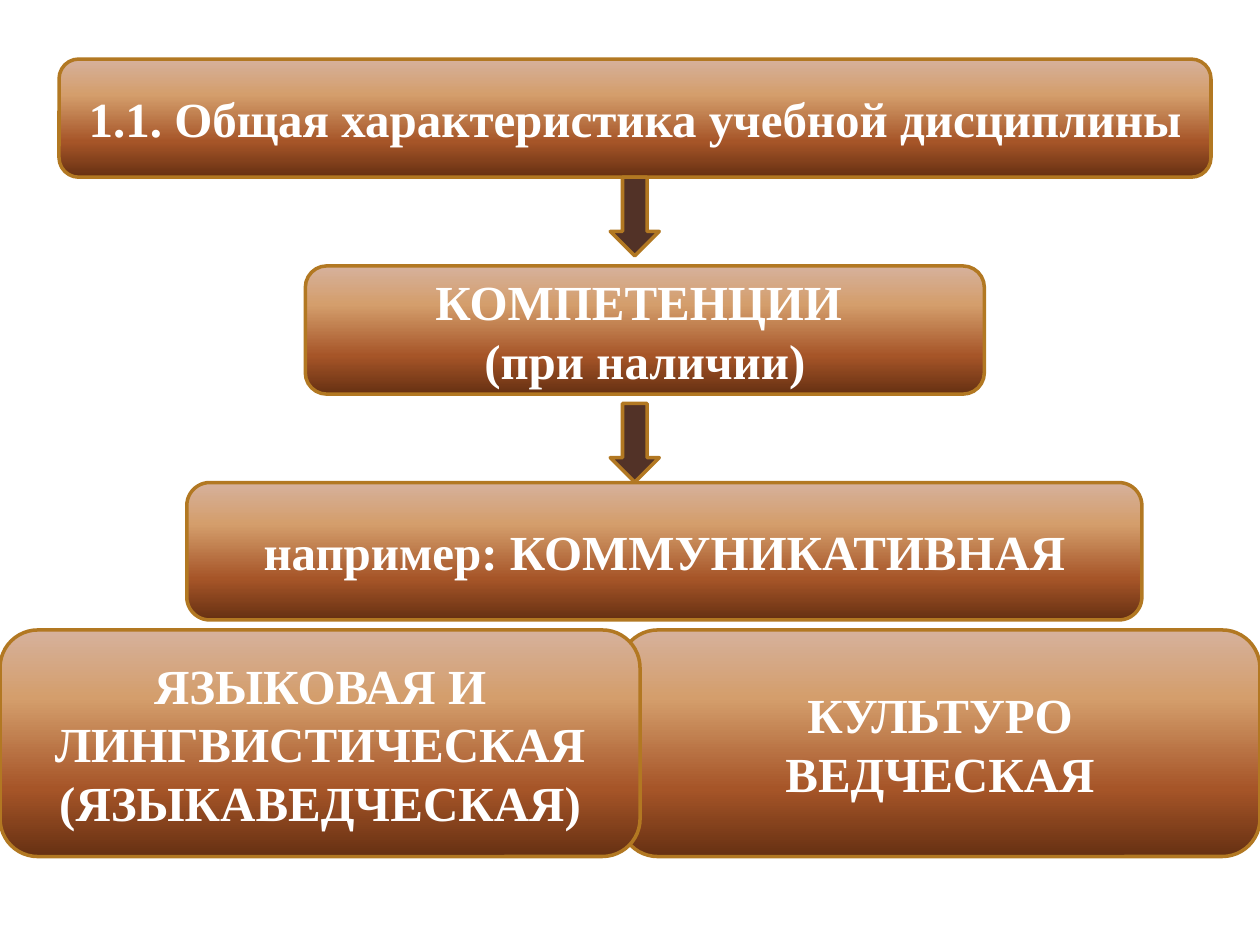
from dataclasses import dataclass

from lxml import etree
from pptx import Presentation
from pptx.dml.color import RGBColor
from pptx.enum import shapes, text
from pptx.oxml import ns
from pptx.util import Pt


@dataclass(frozen=True)
class Theme:
    font: str = "Times New Roman"
    text_size: float = 28
    text_color: str = "FFFFFF"
    line_color: str = "B27822"
    line_width: float = 2
    arrow_color: str = "523227"
    # (position in percent, colour), from top to bottom
    gradient: tuple = ((0, "D6B19C"), (30, "D49E6C"), (70, "A65528"), (100, "663012"))


class SlideBuilder:
    def __init__(self, slide, theme):
        self.slide = slide
        self.theme = theme

    def _outlined_shape(self, kind, left, top, width, height):
        shape = self.slide.shapes.add_shape(
            kind, Pt(left), Pt(top), Pt(width), Pt(height))
        shape.shadow.inherit = False
        shape.line.color.rgb = RGBColor.from_string(self.theme.line_color)
        shape.line.width = Pt(self.theme.line_width)
        return shape

    def _fill_gradient(self, shape):
        """Replace the two default stops by those of the theme."""
        shape.fill.gradient()
        shape.fill.gradient_angle = 270
        stops = shape._element.spPr.find(".//" + ns.qn("a:gsLst"))
        for stop in list(stops):
            stops.remove(stop)
        for percent, color in self.theme.gradient:
            stop = etree.SubElement(stops, ns.qn("a:gs"), pos=str(percent * 1000))
            etree.SubElement(stop, ns.qn("a:srgbClr"), val=color)

    def box(self, label, left, top, width, height):
        shape = self._outlined_shape(
            shapes.MSO_SHAPE.ROUNDED_RECTANGLE, left, top, width, height)
        self._fill_gradient(shape)
        frame = shape.text_frame
        frame.word_wrap = True
        frame.vertical_anchor = text.MSO_ANCHOR.MIDDLE
        frame.text = label
        for paragraph in frame.paragraphs:
            paragraph.alignment = text.PP_ALIGN.CENTER
            for run in paragraph.runs:
                run.font.name = self.theme.font
                run.font.size = Pt(self.theme.text_size)
                run.font.bold = True
                run.font.color.rgb = RGBColor.from_string(self.theme.text_color)

    def down_arrow(self, left, top, width, height):
        shape = self._outlined_shape(
            shapes.MSO_SHAPE.DOWN_ARROW, left, top, width, height)
        shape.fill.solid()
        shape.fill.fore_color.rgb = RGBColor.from_string(self.theme.arrow_color)


def main():
    presentation = Presentation()
    presentation.slide_width, presentation.slide_height = Pt(720), Pt(540)
    slide = presentation.slides.add_slide(presentation.slide_layouts[6])
    builder = SlideBuilder(slide, Theme())

    builder.box("1.1. Общая характеристика учебной дисциплины", 33.75, 33.75, 658.25, 67.5)
    builder.box("например: КОММУНИКАТИВНАЯ", 106.75, 275.75, 545.75, 78.5)

    bottom_top, bottom_width, bottom_height = 360, 365.75, 129.5
    builder.box("КУЛЬТУРО\nВЕДЧЕСКАЯ",
                720 - bottom_width, bottom_top, bottom_width, bottom_height)
    builder.box("ЯЗЫКОВАЯ И ЛИНГВИСТИЧЕСКАЯ (ЯЗЫКАВЕДЧЕСКАЯ)",
                0, bottom_top, bottom_width, bottom_height)

    builder.box("КОМПЕТЕНЦИИ \n(при наличии)", 174.5, 152, 388, 73.25)
    for arrow_top in (101.25, 230.5):
        builder.down_arrow(348.75, arrow_top, 28, 45)

    presentation.save("out.pptx")


if __name__ == "__main__":
    main()
